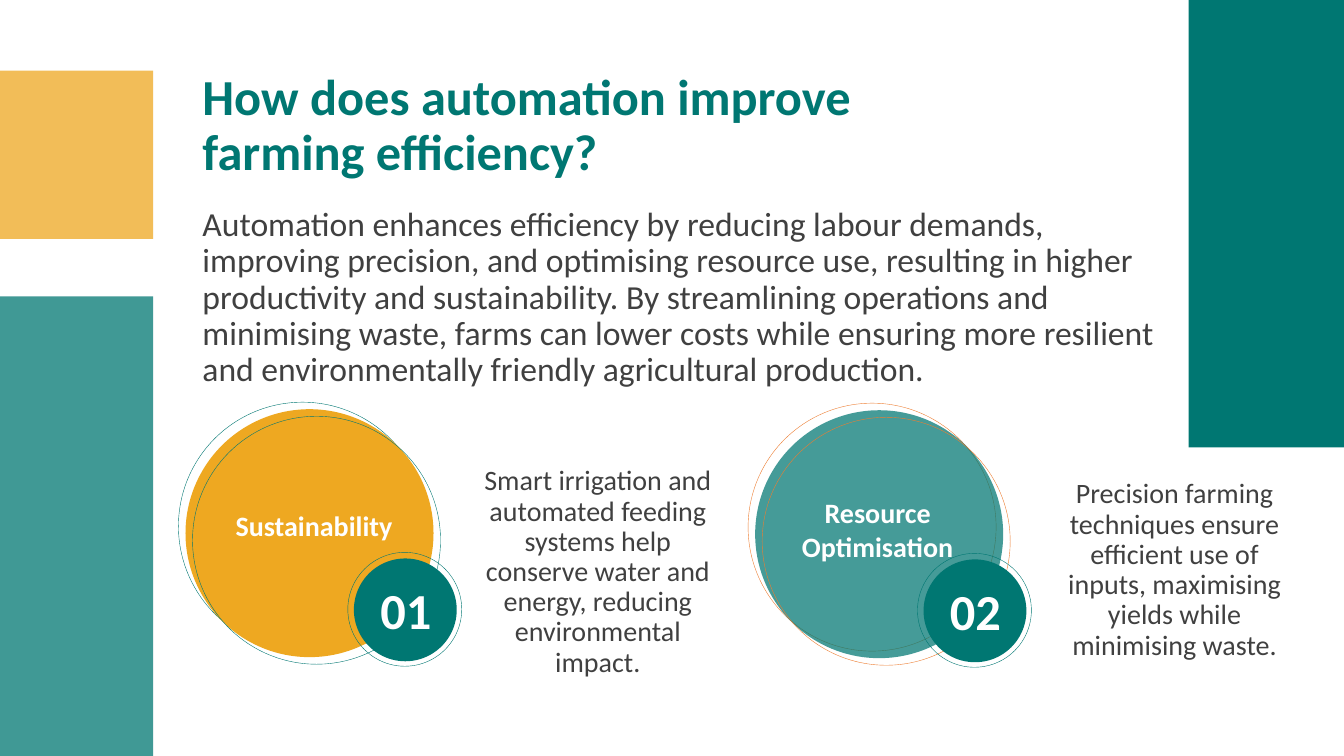
from lxml import etree
from pptx import Presentation
from pptx.dml.color import RGBColor
from pptx.enum import shapes, text
from pptx.oxml import ns
from pptx.util import Inches, Pt

TEAL = RGBColor(0x00, 0x77, 0x72)
GOLD = RGBColor(0xEE, 0xA8, 0x21)
ORANGE = RGBColor(0xED, 0x7D, 0x31)
GREY = RGBColor(0x40, 0x40, 0x40)
WHITE = RGBColor(0xFF, 0xFF, 0xFF)

RECT = shapes.MSO_SHAPE.RECTANGLE
OVAL = shapes.MSO_SHAPE.OVAL
LEFT, MID = text.PP_ALIGN.LEFT, text.PP_ALIGN.CENTER


class Deck:
    font = "Calibri"
    hair = Pt(0.28)

    def __init__(self):
        self.prs = Presentation()
        self.prs.slide_width = Inches(13.33)
        self.prs.slide_height = Inches(7.5)
        self.slide = self.prs.slides.add_slide(self.prs.slide_layouts[6])

    def solid(self, kind, x, y, w, h, color, alpha=100):
        shape = self.slide.shapes.add_shape(
            kind, Inches(x), Inches(y), Inches(w), Inches(h))
        shape.shadow.inherit = False
        shape.line.fill.background()
        shape.fill.solid()
        shape.fill.fore_color.rgb = color
        if alpha < 100:
            tint = shape.element.spPr.find(".//" + ns.qn("a:srgbClr"))
            etree.SubElement(tint, ns.qn("a:alpha"), val=str(alpha * 1000))

    def ring(self, x, y, size, color):
        shape = self.slide.shapes.add_shape(
            OVAL, Inches(x), Inches(y), Inches(size), Inches(size))
        shape.shadow.inherit = False
        shape.fill.background()
        shape.line.color.rgb = color
        shape.line.width = self.hair

    def label(self, words, x, y, w, h, size, color,
              bold=False, align=MID, space=None):
        box = self.slide.shapes.add_textbox(
            Inches(x), Inches(y), Inches(w), Inches(h))
        frame = box.text_frame
        frame.word_wrap = True
        para = frame.paragraphs[0]
        para.alignment = align
        if space:
            para.line_spacing = space
        run = para.add_run()
        run.text = words
        run.font.name = self.font
        run.font.size = Pt(size)
        run.font.bold = bold
        run.font.color.rgb = color

    def badge(self, x, y):
        """Draw a small disc inside a thin ring."""
        self.solid(OVAL, x + 0.06, y + 0.06, 1.02, 1.02, TEAL)
        self.ring(x, y, 1.13, TEAL)

    def topic(self, x, y, number, fill, alpha, edge, title, note):
        """Draw a titled disc, its rings and badge, and the note beside it."""
        self.ring(x, y, 2.46, edge)
        self.solid(OVAL, x + 0.07, y + 0.07, 2.46, 2.46, fill, alpha)
        self.ring(x + 0.14, y + 0.14, 2.46, edge)
        self.badge(x + 1.68, y + 1.49)
        words, left, top, tall = title
        self.label(words, left, top, 2.55, tall, 20, WHITE, True)
        self.label(number, x + 1.83, y + 1.71, 0.85, 0.71, 36, WHITE, True)
        words, left, top, tall = note
        self.label(words, left, top, 2.46, tall, 20, GREY, space=0.9)


def main():
    deck = Deck()
    deck.solid(RECT, -0.04, 2.94, 1.56, 4.56, TEAL, 75)
    deck.solid(RECT, -0.04, 0.7, 1.56, 1.67, GOLD, 75)
    deck.solid(RECT, 11.79, 0, 1.56, 4.44, TEAL)

    deck.label("How does automation improve farming efficiency?",
               1.91, 0.67, 7.1, 0.46, 36, TEAL, True, LEFT, 0.9)
    deck.label("Automation enhances efficiency by reducing labour demands, "
               "improving precision, and optimising resource use, resulting "
               "in higher productivity and sustainability. By streamlining "
               "operations and minimising waste, farms can lower costs while "
               "ensuring more resilient and environmentally friendly "
               "agricultural production.",
               1.91, 2.01, 9.65, 1.98, 24, GREY, False, LEFT, 0.9)

    deck.topic(1.77, 3.99, "01", GOLD, 100, TEAL,
               ("Sustainability", 1.84, 5, 0.44),
               ("Smart irrigation and automated feeding systems help conserve "
                "water and energy, reducing environmental impact.",
                4.7, 4.58, 2.46))
    deck.topic(7.42, 4, "02", TEAL, 73, ORANGE,
               ("Resource Optimisation", 7.43, 4.87, 0.77),
               ("Precision farming techniques ensure efficient use of inputs, "
                "maximising yields while minimising waste.",
                10.42, 4.71, 2))

    deck.prs.save("out.pptx")


if __name__ == "__main__":
    main()
